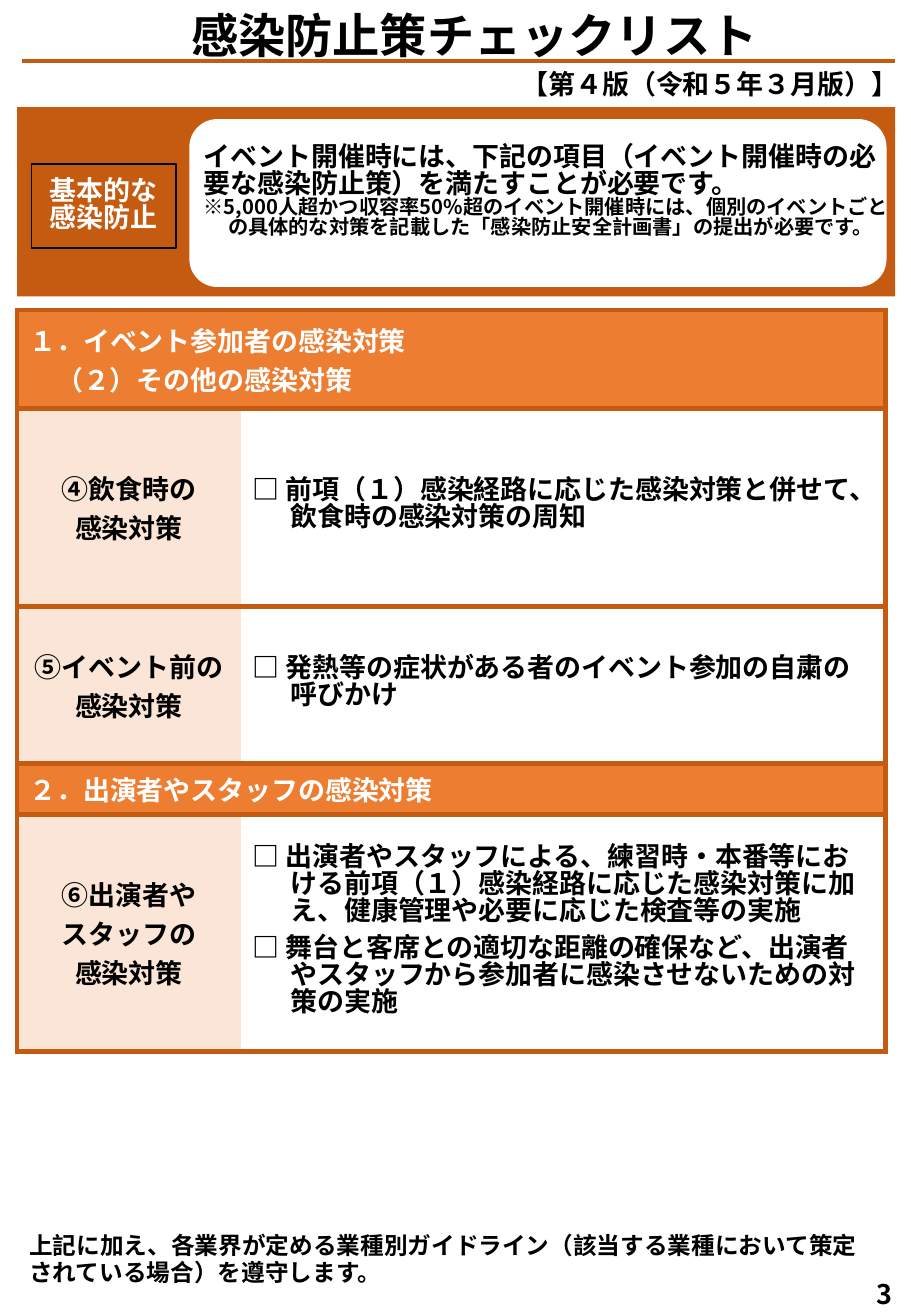
from dataclasses import dataclass
from lxml import etree
from pptx import Presentation
from pptx.dml.color import RGBColor
from pptx.enum.shapes import MSO_CONNECTOR, MSO_SHAPE
from pptx.enum.text import MSO_ANCHOR, PP_ALIGN
from pptx.oxml.ns import qn
from pptx.util import Cm, Pt

LEFT, MID = PP_ALIGN.LEFT, PP_ALIGN.CENTER
TOP, CENTER = MSO_ANCHOR.TOP, MSO_ANCHOR.MIDDLE
RECT, ROUND = MSO_SHAPE.RECTANGLE, MSO_SHAPE.ROUNDED_RECTANGLE
LINE = MSO_CONNECTOR.STRAIGHT


@dataclass(frozen=True)
class Theme:
    font: str = "Noto Sans CJK JP"
    head_font: str = "Calibri"
    ink: str = "000000"
    white: str = "FFFFFF"
    rust: str = "C55A11"
    orange: str = "ED7D31"
    peach: str = "FBE5D6"
    title: int = 28
    main: int = 16
    foot: int = 14
    note: int = 12


@dataclass(frozen=True)
class Para:
    text: str
    size: int = Theme.main
    color: str = Theme.ink
    font: str = Theme.font
    align: int = LEFT
    space: object = None
    after: int = 0
    margin: float = 0
    hang: float = 0


class Page:
    def __init__(self, slide, theme):
        self.slide, self.theme = slide, theme

    def put(self, frame, paras):
        for i, item in enumerate(paras):
            para = frame.paragraphs[0] if i == 0 else frame.add_paragraph()
            para.text = item.text
            para.alignment = item.align
            para.space_after = Pt(item.after)
            if item.space:
                para.line_spacing = item.space
            props = para._p.get_or_add_pPr()
            props.set("marL", str(Cm(item.margin)))
            props.set("indent", str(-Cm(item.hang)))
            font = para.font
            font.name, font.size, font.bold = item.font, Pt(item.size), True
            font.color.rgb = RGBColor.from_string(item.color)
            east = etree.SubElement(font._element, qn("a:ea"))
            east.set("typeface", self.theme.font)

    def text(self, box, paras, anchor=TOP):
        frame = self.slide.shapes.add_textbox(*map(Cm, box)).text_frame
        frame.word_wrap = True
        frame.vertical_anchor = anchor
        self.put(frame, paras)

    def shape(self, kind, box, fill=None, line=None, paras=()):
        shape = self.slide.shapes.add_shape(kind, *map(Cm, box))
        shape.shadow.inherit = False
        if fill:
            shape.fill.solid()
            shape.fill.fore_color.rgb = RGBColor.from_string(fill)
        else:
            shape.fill.background()
        if line:
            shape.line.color.rgb = RGBColor.from_string(line)
            shape.line.width = Pt(1)
        else:
            shape.line.fill.background()
        shape.text_frame.vertical_anchor = CENTER
        self.put(shape.text_frame, paras)

    def rule(self, x1, x2, y, color, width):
        rule = self.slide.shapes.add_connector(LINE, Cm(x1), Cm(y), Cm(x2), Cm(y))
        rule.line.color.rgb = RGBColor.from_string(color)
        rule.line.width = Pt(width)
        etree.SubElement(rule._element.spPr, qn("a:effectLst"))

    def cell(self, cell, paras, fill, sides):
        self.put(cell.text_frame, paras)
        cell.vertical_anchor = CENTER
        props = cell._tc.get_or_add_tcPr()
        for side in "LRTB":
            edge = etree.SubElement(props, qn(f"a:ln{side}"))
            if side in sides:
                edge.set("w", str(Pt(3)))
                paint = etree.SubElement(edge, qn("a:solidFill"))
                etree.SubElement(paint, qn("a:srgbClr")).set("val", self.theme.rust)
            else:
                etree.SubElement(edge, qn("a:noFill"))
        cell.fill.solid()
        cell.fill.fore_color.rgb = RGBColor.from_string(fill)

    def table(self, x, y, cols, rows):
        """Each row is (height, label lines, items); no items makes a heading."""
        t = self.theme
        high = sum(row[0] for row in rows)
        grid = self.slide.shapes.add_table(
            len(rows), len(cols), Cm(x), Cm(y), Cm(sum(cols)), Cm(high)).table
        grid.first_row = grid.horz_banding = False
        for col, width in zip(grid.columns, cols):
            col.width = Cm(width)
        for i, (height, label, items) in enumerate(rows):
            grid.rows[i].height = Cm(height)
            left, right = grid.cell(i, 0), grid.cell(i, 1)
            if items:
                names = [Para(s, align=MID) for s in label]
                checks = [Para("□ " + s, space=Pt(16), after=6, margin=0.79, hang=0.79)
                          for s in items]
                self.cell(left, names, t.peach, "LTB")
                self.cell(right, checks, t.white, "RTB")
            else:
                left.merge(right)
                heads = [Para(s, color=t.white, font=t.head_font, margin=0.56 * n)
                         for n, s in enumerate(label)]
                self.cell(left, heads, t.orange, "LRTB")
                self.cell(right, [], t.orange, "LRTB")


def main():
    t = Theme()
    deck = Presentation()
    deck.slide_width, deck.slide_height = Cm(19.05), Cm(27.51)
    page = Page(deck.slides.add_slide(deck.slide_layouts[6]), t)

    # Checklist table
    page.table(0.36, 6.48, (4.67, 13.49), [
        (2.06, ["１．イベント参加者の感染対策", "（２）その他の感染対策"], []),
        (4.14, ["④飲食時の", "感染対策"],
         ["前項（１）感染経路に応じた感染対策と併せて、飲食時の感染対策の周知"]),
        (3.28, ["⑤イベント前の感染対策"],
         ["発熱等の症状がある者のイベント参加の自粛の呼びかけ"]),
        (1.07, ["２．出演者やスタッフの感染対策"], []),
        (4.95, ["⑥出演者や", "スタッフの", "感染対策"],
         ["出演者やスタッフによる、練習時・本番等における前項（１）感染経路に応じた"
          "感染対策に加え、健康管理や必要に応じた検査等の実施",
          "舞台と客席との適切な距離の確保など、出演者やスタッフから参加者に"
          "感染させないための対策の実施"]),
    ])

    # Banner with its label and white panel
    page.shape(RECT, (0.36, 2.24, 18.36, 3.96), t.rust)
    page.shape(ROUND, (3.96, 2.49, 14.58, 3.51), t.white)
    page.shape(RECT, (0.66, 3.43, 3.02, 1.75), line=t.ink, paras=[
        Para(s, color=t.white, align=MID, space=0.82) for s in ("基本的な", "感染防止")])
    page.text((4.01, 2.92, 14.83, 2.72), [
        Para("イベント開催時には、下記の項目（イベント開催時の必要な感染防止策）を"
             "満たすことが必要です。", space=0.82),
        Para("※5,000人超かつ収容率50%超のイベント開催時には、個別のイベントごとの"
             "具体的な対策を記載した「感染防止安全計画書」の提出が必要です。",
             size=t.note, space=0.82, margin=0.51, hang=0.51)])

    # Title, rule and version
    page.text((-0.58, 0.15, 21, 1.45),
              [Para("感染防止策チェックリスト", size=t.title, align=MID, space=0.9)])
    page.rule(0.46, 18.72, 1.27, t.rust, 2.25)
    page.text((10.34, 1.37, 9.02, 0.94),
              [Para("【第４版（令和５年３月版）】", align=MID, space=0.88)])

    # Closing note and page number
    page.text((0.36, 25.63, 17.96, 1.4), [
        Para("上記に加え、各業界が定める業種別ガイドライン（該当する業種において"
             "策定されている場合）を遵守します。", size=t.foot, space=Pt(16))], CENTER)
    page.text((17.75, 26.57, 1.5, 0.94), [Para("3", align=MID)], CENTER)

    deck.save("out.pptx")


if __name__ == "__main__":
    main()
